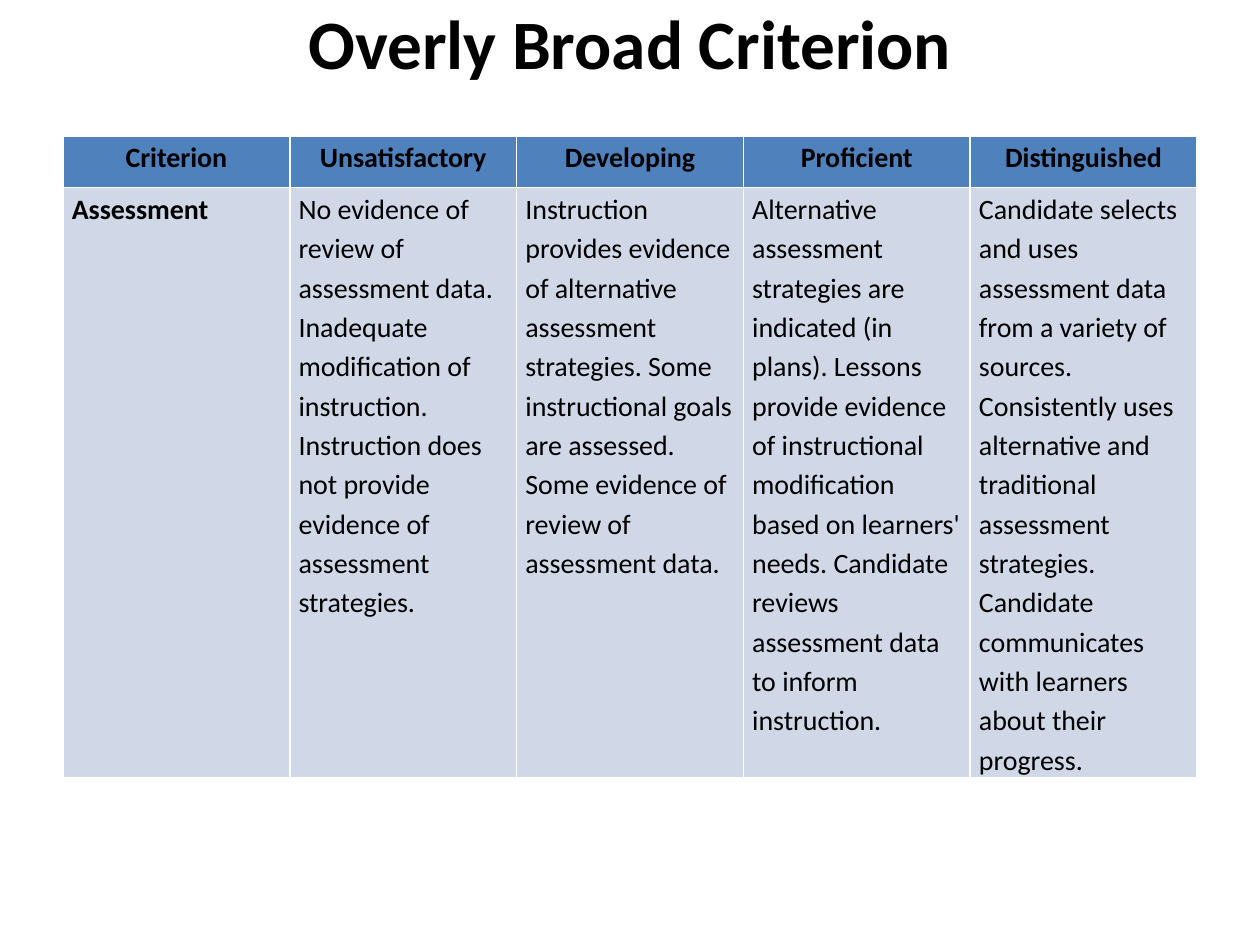
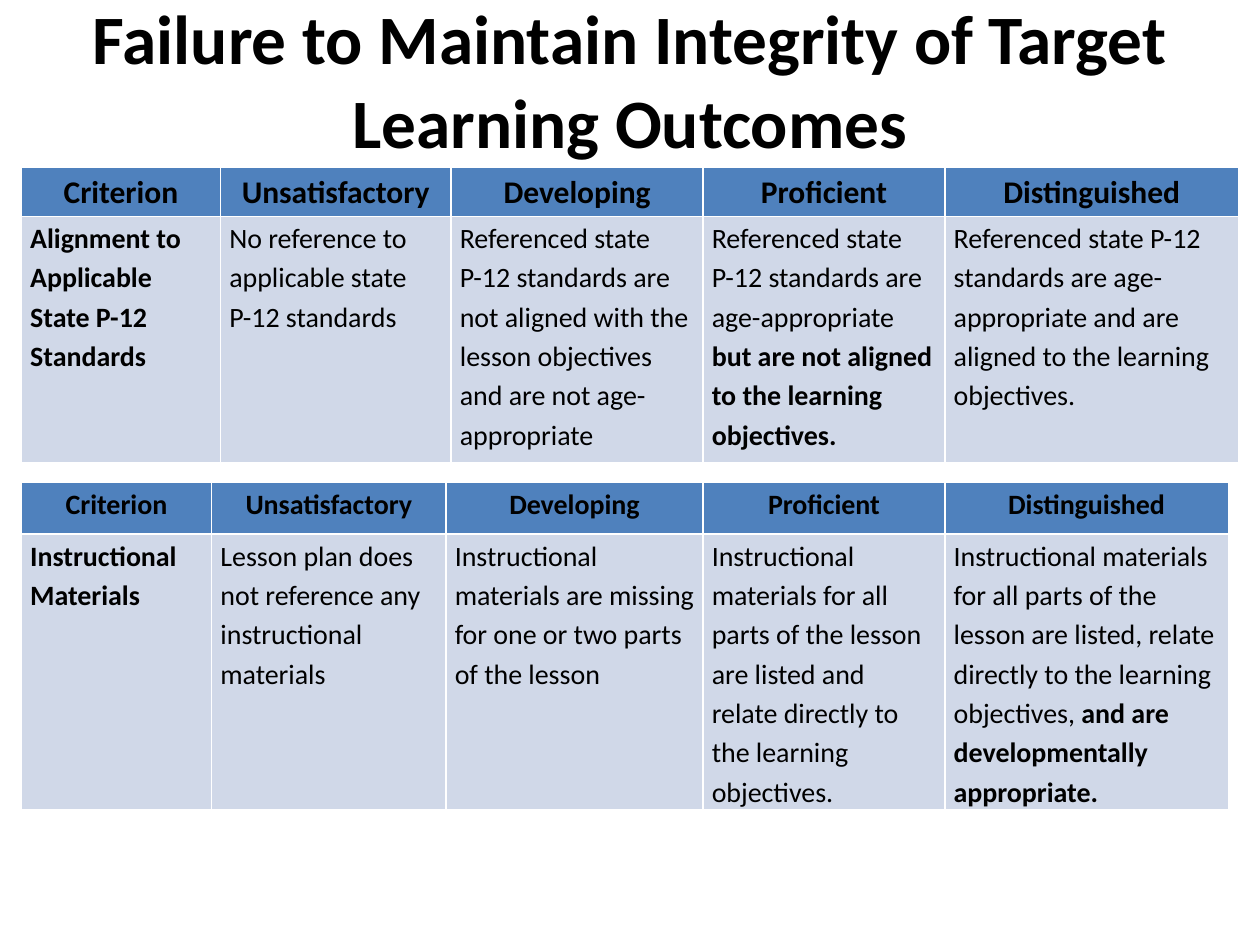
from pptx import Presentation
from pptx.dml.color import RGBColor
from pptx.enum.text import MSO_ANCHOR, PP_ALIGN
from pptx.util import Inches, Pt

BLACK = RGBColor(0x00, 0x00, 0x00)
BLUE = RGBColor(0x4F, 0x81, 0xBD)
PALE = RGBColor(0xD0, 0xD8, 0xE8)
FONT = "Calibri"
HEADS = ("Criterion", "Unsatisfactory", "Developing", "Proficient",
         "Distinguished")


class Deck:
    def __init__(self):
        self.prs = Presentation()
        self.prs.slide_width = Inches(10)
        self.prs.slide_height = Inches(7.5)
        self.slide = None

    def style(self, para, size, bold):
        para.font.name = FONT
        para.font.size = Pt(size)
        para.font.bold = bold
        para.font.color.rgb = BLACK

    def add_slide(self, title, height):
        self.slide = self.prs.slides.add_slide(self.prs.slide_layouts[5])
        box = self.slide.shapes.title
        box.left, box.top = Inches(0.5), Inches(0)
        box.width, box.height = Inches(9), Inches(height)
        frame = box.text_frame
        frame.text = title
        frame.word_wrap = True
        frame.vertical_anchor = MSO_ANCHOR.MIDDLE
        para = frame.paragraphs[0]
        para.alignment = PP_ALIGN.CENTER
        self.style(para, 39.6, True)

    def fill_cell(self, cell, text, color, size, bold, align):
        """Write a cell; a (plain, strong) pair ends in bold."""
        cell.margin_left = cell.margin_right = Inches(0.07)
        cell.margin_top = cell.margin_bottom = 0
        cell.fill.solid()
        cell.fill.fore_color.rgb = color
        para = cell.text_frame.paragraphs[0]
        para.alignment = align
        para.line_spacing = 1.15
        self.style(para, size, bold)
        plain, strong = text if isinstance(text, tuple) else (text, "")
        para.add_run().text = plain
        if strong:
            run = para.add_run()
            run.text = strong
            run.font.bold = True

    def add_rubric(self, left, top, cols, rows, levels, size=16):
        """Add a heading row and one criterion row with its levels."""
        table = self.slide.shapes.add_table(
            2, len(cols), Inches(left), Inches(top),
            Inches(sum(cols)), Inches(sum(rows))).table
        for row, height in zip(table.rows, rows):
            row.height = Inches(height)
        for i, width in enumerate(cols):
            table.columns[i].width = Inches(width)
            self.fill_cell(table.cell(0, i), HEADS[i], BLUE, size, True,
                           PP_ALIGN.CENTER)
            self.fill_cell(table.cell(1, i), levels[i], PALE, 16, i == 0,
                           PP_ALIGN.LEFT)


def main():
    deck = Deck()

    deck.add_slide("Overly Broad Criterion", 0.67)
    deck.add_rubric(0.5, 1.08, [1.8] * 5, [0.41, 4.58], [
        "Assessment",
        "No evidence of review of assessment data. Inadequate modification "
        "of instruction. Instruction does not provide evidence of "
        "assessment strategies.",
        "Instruction provides evidence of alternative assessment "
        "strategies. Some instructional goals are assessed. Some evidence "
        "of review of assessment data.",
        "Alternative assessment strategies are indicated (in plans). "
        "Lessons provide evidence of instructional modification based on "
        "learners' needs. Candidate reviews assessment data to inform "
        "instruction.",
        "Candidate selects and uses assessment data from a variety of "
        "sources. Consistently uses alternative and traditional assessment "
        "strategies. Candidate communicates with learners about their "
        "progress.",
    ])

    deck.add_slide(
        "Failure to Maintain Integrity of Target Learning Outcomes", 1.25)
    deck.add_rubric(0.17, 1.33, [1.58, 1.83, 2, 1.92, 2.33], [0.39, 1.95], [
        "Alignment to Applicable State P-12 Standards",
        "No reference to applicable state P-12 standards",
        "Referenced state P-12 standards are not aligned with the lesson "
        "objectives and are not age-appropriate",
        ("Referenced state P-12 standards are age-appropriate ",
         "but are not aligned to the learning objectives."),
        "Referenced state P-12 standards are age-appropriate and are "
        "aligned to the learning objectives.",
    ], size=18)
    deck.add_rubric(0.17, 3.83, [1.51, 1.86, 2.04, 1.92, 2.25],
                    [0.41, 2.12], [
        "Instructional Materials",
        "Lesson plan does not reference any instructional materials",
        "Instructional materials are missing for one or two parts of the "
        "lesson",
        "Instructional materials for all parts of the lesson are listed and "
        "relate directly to the learning objectives.",
        ("Instructional materials for all parts of the lesson are listed, "
         "relate directly to the learning objectives, ",
         "and are developmentally appropriate."),
    ])

    deck.prs.save("out.pptx")


if __name__ == "__main__":
    main()
